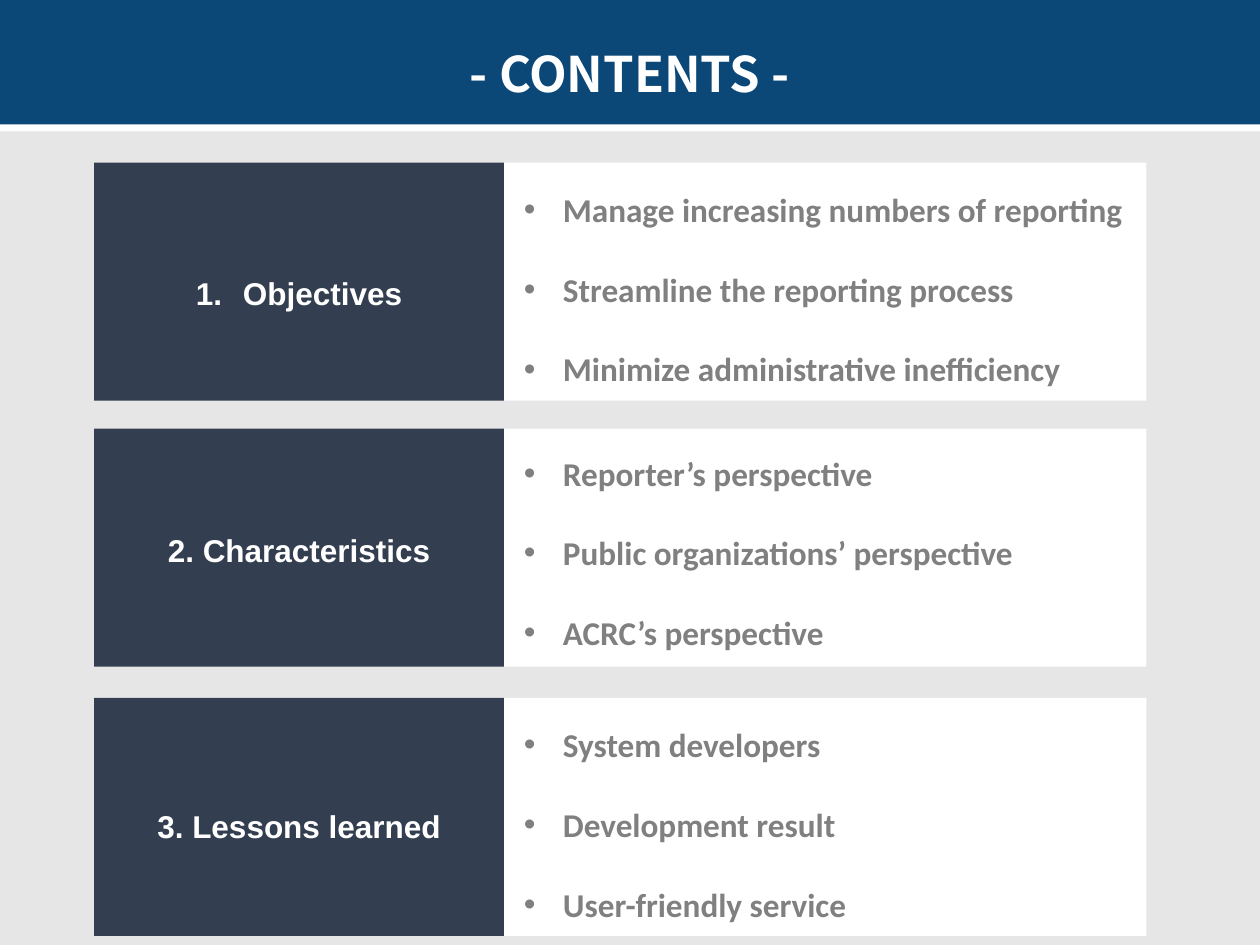
from lxml.etree import SubElement
from pptx import Presentation
from pptx.dml.color import RGBColor
from pptx.enum.shapes import MSO_SHAPE
from pptx.enum.text import MSO_ANCHOR, MSO_AUTO_SIZE, PP_ALIGN
from pptx.oxml.ns import qn
from pptx.util import Cm, Pt

COLORS = {
    "background": "E7E6E6",
    "header": "0B4877",
    "label": "333F50",
    "panel": "FFFFFF",
    "light_text": "FFFFFF",
    "grey_text": "808080",
}
LABEL_LEFT, LABEL_WIDTH = 1.9, 8.26
PANEL_LEFT, PANEL_WIDTH = 10.16, 12.95
ROW_HEIGHT = 4.8

# top, label, label numbered, label spacing, label bottom inset, panel bottom inset, points
SECTIONS = [
    (3.28, "Objectives", True, 2, 0.45, 0.64,
     ["Manage increasing numbers of reporting",
      "Streamline the reporting process",
      "Minimize administrative inefficiency"]),
    (8.64, "2. Characteristics", False, 1.5, 0.43, 0.73,
     ["Reporter’s perspective",
      "Public organizations’ perspective",
      "ACRC’s perspective"]),
    (14.07, "3. Lessons learned", False, 2, 0.53, 0.64,
     ["System developers",
      "Development result",
      "User-friendly service"]),
]


class ContentsPage:
    def __init__(self, deck):
        self.page = deck.slides.add_slide(deck.slide_layouts[6])
        fill = self.page.background.fill
        fill.solid()
        fill.fore_color.rgb = self.color("background")

    def color(self, name):
        return RGBColor.from_string(COLORS[name])

    def rectangle(self, left, top, width, height, color):
        box = self.page.shapes.add_shape(
            MSO_SHAPE.RECTANGLE, Cm(left), Cm(top), Cm(width), Cm(height))
        box.fill.solid()
        box.fill.fore_color.rgb = self.color(color)
        box.line.fill.background()
        box.shadow.inherit = False
        return box

    def set_text(self, box, lines, font, size, color, spacing, align):
        frame = box.text_frame
        frame.word_wrap = True
        frame.text = "\n".join(lines)
        for para in frame.paragraphs:
            para.alignment = align
            para.line_spacing = float(spacing)
            for span in para.runs:
                span.font.name = font
                span.font.size = Pt(size)
                span.font.bold = True
                span.font.color.rgb = self.color(color)
                for script in ("a:ea", "a:cs"):
                    SubElement(span.font._element, qn(script), typeface=font)
        return frame

    def mark(self, para, indent, tag, **attributes):
        """Give a paragraph a hanging bullet or number."""
        properties = para._p.get_or_add_pPr()
        properties.set("marL", str(Cm(indent)))
        properties.set("indent", str(-Cm(indent)))
        SubElement(properties, qn("a:buFont"), typeface="Arial")
        SubElement(properties, qn(tag), **attributes)

    def header(self, text):
        band = self.rectangle(0, -0.03, 25.4, 2.54, "header")
        # Crisp white shadow forms the stripe under the band
        effects = band._element.spPr.find(qn("a:effectLst"))
        shadow = SubElement(effects, qn("a:outerShdw"), blurRad="0", dist=str(Pt(4)),
                            dir="5400000", algn="t", rotWithShape="0")
        SubElement(shadow, qn("a:srgbClr"), val=COLORS["panel"])
        title = self.page.shapes.add_textbox(Cm(7.59), Cm(0.15), Cm(10.21), Cm(1.83))
        frame = self.set_text(title, [text], "Noto Sans CJK KR", 28, "light_text",
                              1.5, PP_ALIGN.CENTER)
        frame.auto_size = MSO_AUTO_SIZE.SHAPE_TO_FIT_TEXT

    def label(self, top, text, numbered, spacing, bottom):
        box = self.rectangle(LABEL_LEFT, top, LABEL_WIDTH, ROW_HEIGHT, "label")
        frame = self.set_text(box, [text], "Arial", 18, "light_text",
                              spacing, PP_ALIGN.CENTER)
        frame.vertical_anchor = MSO_ANCHOR.MIDDLE
        frame.margin_bottom = Cm(bottom)
        if numbered:
            self.mark(frame.paragraphs[0], 0.95, "a:buAutoNum", type="arabicPeriod")

    def panel(self, top, points, bottom):
        box = self.rectangle(PANEL_LEFT, top, PANEL_WIDTH, ROW_HEIGHT, "panel")
        frame = self.set_text(box, points, "Calibri", 19, "grey_text", 2, PP_ALIGN.LEFT)
        frame.vertical_anchor = MSO_ANCHOR.MIDDLE
        frame.margin_left = Cm(0.4)
        frame.margin_bottom = Cm(bottom)
        for para in frame.paragraphs:
            self.mark(para, 0.79, "a:buChar", char="•")


def main():
    deck = Presentation()
    deck.slide_width, deck.slide_height = Cm(25.4), Cm(19.05)
    contents = ContentsPage(deck)

    # Title band
    contents.header("- CONTENTS -")

    # One label and one list per section
    for top, text, numbered, spacing, label_bottom, panel_bottom, points in SECTIONS:
        contents.panel(top, points, panel_bottom)
        contents.label(top, text, numbered, spacing, label_bottom)

    deck.save("out.pptx")


if __name__ == "__main__":
    main()
